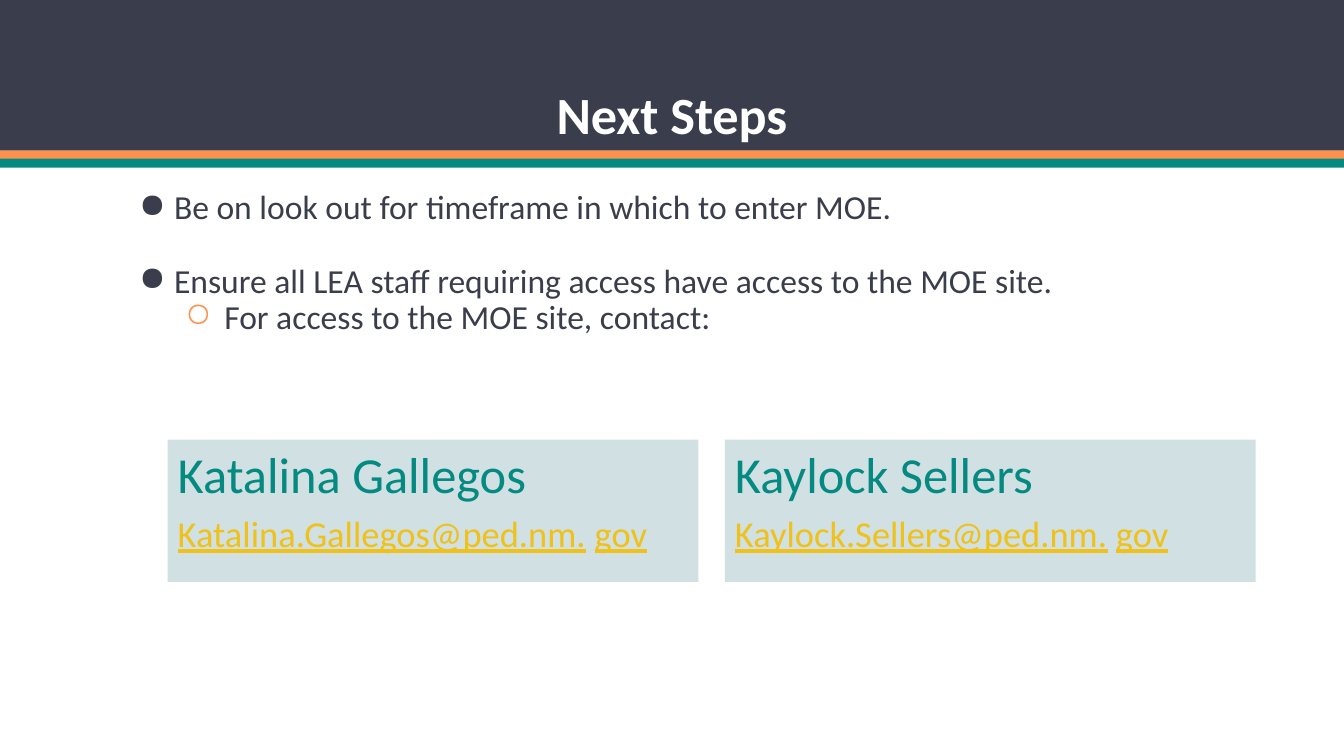
from lxml import etree
from pptx import Presentation, util as u
from pptx.dml.color import RGBColor
from pptx.enum import shapes, text
from pptx.oxml.ns import qn

DARK, ORANGE, TEAL = "3A3D4B", "FF914D", "048A81"
PALE, GOLD, WHITE = "D0E0E3", "EFC119", "FFFFFF"


def paint(part, hue):
    """Give a fill or font a solid colour."""
    if hasattr(part, "solid"):
        part.solid()
        part.fore_color.rgb = RGBColor.from_string(hue)
    else:
        part.color.rgb = RGBColor.from_string(hue)


def frame(shape, inset=0):
    """Set wrapping, top anchor and equal insets on a text frame."""
    tf = shape.text_frame
    tf.word_wrap = True
    tf.auto_size = text.MSO_AUTO_SIZE.NONE
    tf.vertical_anchor = text.MSO_ANCHOR.TOP
    tf.margin_left = tf.margin_right = u.Cm(inset)
    tf.margin_top = tf.margin_bottom = u.Cm(inset)
    return tf


def write(para, words, size=18, hue=DARK, bold=False, align=text.PP_ALIGN.LEFT, gap=0):
    """Fill a paragraph; words is one string or (string, underlined) pairs."""
    para.alignment = align
    para.line_spacing = 0.9
    para.space_before = u.Pt(gap)
    para.space_after = u.Pt(0)
    for part, line in [(words, False)] if isinstance(words, str) else words:
        run = para.add_run()
        run.text = part
        font = run.font
        font.name, font.size, font.bold = "Calibri", u.Pt(size), bold
        font.underline = line
        paint(font, hue)
    return para


def bullet(para, mark, hue, left, hang):
    """Add a coloured bullet with a hanging indent."""
    props = para._p.get_or_add_pPr()
    props.set("marL", str(u.Cm(left)))
    props.set("indent", str(-u.Cm(hang)))
    tint = etree.SubElement(props, qn("a:buClr"))
    etree.SubElement(tint, qn("a:srgbClr"), val=hue)
    etree.SubElement(props, qn("a:buChar"), char=mark)


def rect(slide, x, y, w, h, hue):
    """Draw a plain filled rectangle."""
    box = slide.shapes.add_shape(
        shapes.MSO_SHAPE.RECTANGLE, u.Cm(x), u.Cm(y), u.Cm(w), u.Cm(h))
    box.shadow.inherit = False
    box.line.fill.background()
    paint(box.fill, hue)
    return box


def head(slide, words):
    """Place the title above the bands."""
    title = slide.shapes.title
    title.left, title.top = u.Cm(0.63), u.Cm(1.68)
    title.width, title.height = u.Cm(24.14), u.Cm(1.07)
    slide.shapes._spTree.append(title._element)
    write(frame(title).paragraphs[0], words, size=28, hue=WHITE, bold=True,
          align=text.PP_ALIGN.CENTER)


def steps(slide, items):
    """Write the bulleted list of (level, gap, words)."""
    box = slide.shapes.add_textbox(u.Cm(2.34), u.Cm(3.61), u.Cm(19.71), u.Cm(4.85))
    tf = frame(box)
    looks = [("●", DARK, 0.95, 0.66), ("○", ORANGE, 1.9, 0.74)]
    for i, (level, gap, words) in enumerate(items):
        para = tf.add_paragraph() if i else tf.paragraphs[0]
        para.level = level
        bullet(write(para, words, gap=gap), *looks[level])


def card(slide, x, name, mail):
    """Draw a contact card with a name and an address."""
    tf = frame(rect(slide, x, 8.31, 10.03, 2.69, PALE), 0.19)
    write(tf.paragraphs[0], name, size=27, hue=TEAL)
    write(tf.add_paragraph(), [(mail, True), (" ", False), ("gov", True)],
          size=19.5, hue=GOLD, gap=6.5)


def main():
    """Build and save the slide."""
    deck = Presentation()
    deck.slide_width, deck.slide_height = u.Cm(25.4), u.Cm(14.29)
    slide = deck.slides.add_slide(deck.slide_layouts[5])
    paint(slide.background.fill, WHITE)
    for y, h, hue in [(0, 2.85, DARK), (2.85, 0.17, ORANGE), (3, 0.17, TEAL)]:
        rect(slide, 0, y, 25.4, h, hue)
    head(slide, "Next Steps")
    steps(slide, [
        (0, 0, "Be on look out for timeframe in which to enter MOE."),
        (0, 19.8, "Ensure all LEA staff requiring access have access to the MOE site."),
        (1, 0, "For access to the MOE site, contact:"),
    ])
    people = [("Katalina Gallegos", "Katalina.Gallegos@ped.nm."),
              ("Kaylock Sellers", "Kaylock.Sellers@ped.nm.")]
    for i, (name, mail) in enumerate(people):
        card(slide, 3.17 + i * 10.53, name, mail)
    deck.save("out.pptx")


if __name__ == "__main__":
    main()
